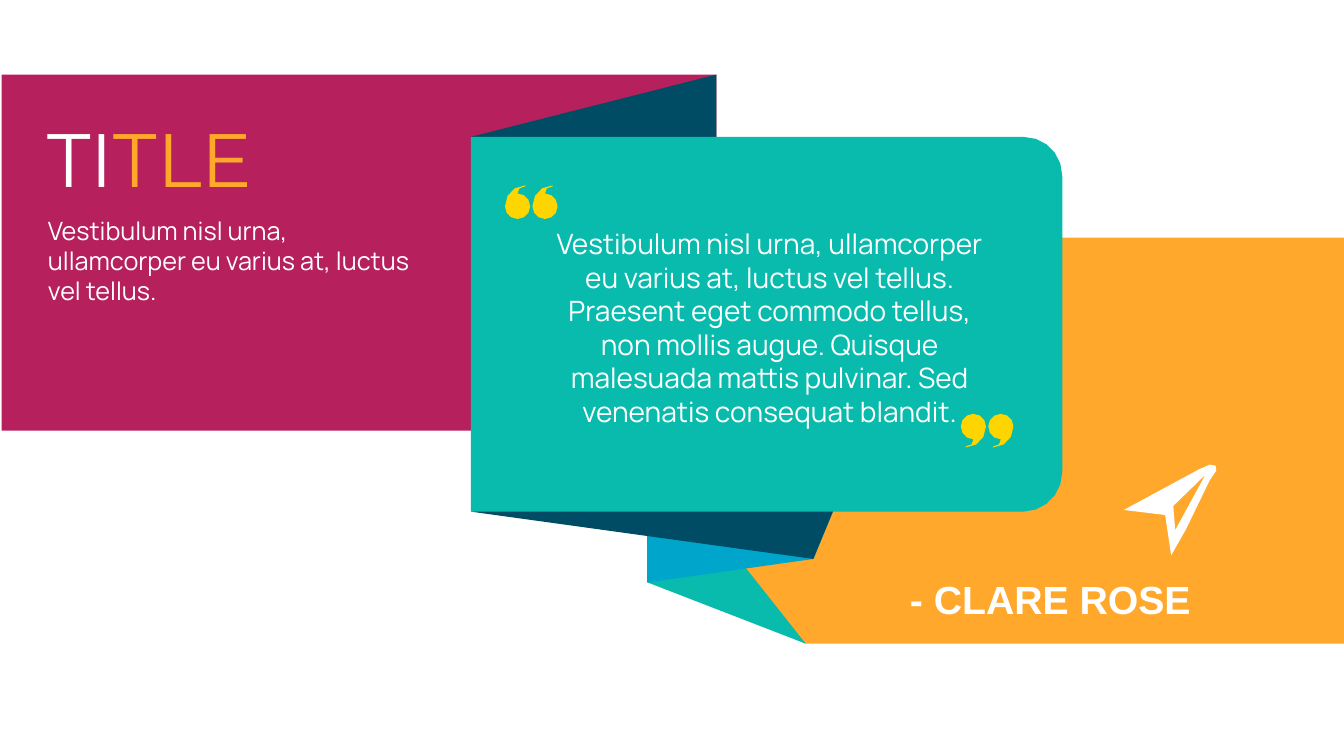
from pptx import Presentation
from pptx.dml.color import RGBColor
from pptx.enum import shapes, text
from pptx.util import Pt

WHITE, ORANGE, TEAL = "FFFFFF", "FFA82C", "08BBAD"
NAVY, BLUE, MAGENTA, YELLOW = "004C64", "00A5CC", "B5205D", "FFD500"


def color(value):
    return RGBColor.from_string(value)


def flatten(outline, steps):
    points = [outline[0]]
    for segment in outline[1:]:
        if len(segment) == 2:
            points.append(segment)
            continue
        start, (ax, ay, bx, by, ex, ey) = points[-1], segment
        for step in range(1, steps + 1):
            t = step / steps
            weights = (1 - t) ** 3, 3 * t * (1 - t) ** 2, 3 * t * t * (1 - t), t ** 3
            x = sum(w * v for w, v in zip(weights, (start[0], ax, bx, ex)))
            y = sum(w * v for w, v in zip(weights, (start[1], ay, by, ey)))
            points.append((x, y))
    return points


def add_span(para, content, font="Manrope", size=18, fill=WHITE, bold=False):
    span = para.add_run()
    span.text = content
    span.font.name = font
    span.font.size = Pt(size)
    span.font.bold = bold
    span.font.color.rgb = color(fill)


class Page:
    def __init__(self, deck):
        self.shapes = deck.slides.add_slide(deck.slide_layouts[6]).shapes

    def paint(self, shape, fill):
        shape.shadow.inherit = False
        shape.fill.solid()
        shape.fill.fore_color.rgb = color(fill)
        shape.line.fill.background()

    def rectangle(self, left, top, width, height, fill):
        kind = shapes.MSO_SHAPE.RECTANGLE
        self.paint(self.shapes.add_shape(kind, Pt(left), Pt(top), Pt(width), Pt(height)), fill)

    def outline(self, fill, *contours, steps=1):
        builder = None
        for contour in contours:
            first, *rest = [(Pt(x), Pt(y)) for x, y in flatten(contour, steps)]
            if builder is None:
                builder = self.shapes.build_freeform(*first)
            else:
                builder.move_to(*first)
            builder.add_line_segments(rest, close=True)
        self.paint(builder.convert_to_shape(), fill)

    def quote_mark(self, left, top, closing=False):
        drop = [(10.3, 2.2), (14.5, 0.7), (14.5, 0),
                (6, 0, 0, 7, 0, 15), (0, 20, 4, 24, 9, 24),
                (14, 24, 18, 20, 18, 15), (18, 10, 14, 5.8, 9, 5.8)]
        points = flatten(drop, 3)
        if closing:
            points = [(18 - x, 24 - y) for x, y in points]
        self.outline(YELLOW, [(left + x, top + y) for x, y in points])

    def text_box(self, left, top, width, height, spans, centered=False, spacing=None):
        box = self.shapes.add_textbox(Pt(left), Pt(top), Pt(width), Pt(height))
        box.text_frame.word_wrap = True
        para = box.text_frame.paragraphs[0]
        para.alignment = text.PP_ALIGN.CENTER if centered else text.PP_ALIGN.LEFT
        para.line_spacing = spacing
        for content, style in spans:
            add_span(para, content, **style)


def main():
    deck = Presentation()
    deck.slide_width, deck.slide_height = Pt(960), Pt(540)
    page = Page(deck)

    page.outline(ORANGE, [(960, 459.8), (575.5, 459.8), (476, 415), (525.5, 169.8), (960, 169.8)])
    page.rectangle(1.2, 53.3, 510.5, 254.3, MAGENTA)
    page.outline(NAVY, [(511.7, 162), (511.7, 53.3), (336.3, 97.8)])
    page.outline(TEAL, [(462.3, 416), (513.5, 381.5), (575.5, 459.8)])
    page.outline(BLUE, [(610, 329), (581, 399.3), (462.3, 416), (462.3, 359.3)])
    page.outline(NAVY, [(610, 329), (581, 399.3), (336.3, 365.5)])
    page.outline(TEAL, [(336.3, 365.5), (336.3, 97.8), (731, 97.8),
                        (746.5, 97.8, 758.8, 110, 758.8, 126), (758.8, 337),
                        (758.8, 352.5, 746.5, 365.5, 731, 365.5)], steps=5)

    title_style = dict(font="Montserrat", size=54)
    page.text_box(26.9, 83.5, 325.5, 52.5,
                  [("TI", title_style), ("TLE", dict(title_style, fill=ORANGE))], spacing=0.9)
    page.text_box(27.2, 150.1, 273.6, 90,
                  [("Vestibulum nisl urna, ullamcorper eu varius at, luctus vel tellus.", {})])
    page.text_box(385.7, 158.2, 328.3, 147.6,
                  [("Vestibulum nisl urna, ullamcorper eu varius at, luctus vel tellus. "
                    "Praesent eget commodo tellus, non mollis augue. Quisque malesuada "
                    "mattis pulvinar. Sed venenatis consequat blandit.", dict(size=20))],
                  centered=True)

    for index in range(2):
        page.quote_mark(360.7 + 19.6 * index, 132.4)
        page.quote_mark(686.3 + 19.6 * index, 295.6, closing=True)

    page.outline(WHITE,
                 [(868.3, 332.6), (865.4, 329.8, 864, 332.6, 856, 335.5),
                  (802.8, 364.3), (832.3, 367.9), (836.6, 396.7),
                  (836.6, 396.7, 856, 364.3, 864, 343.4),
                  (868.3, 337, 871.2, 334.1, 868.3, 332.6)],
                 [(861.1, 339.1), (839.5, 378.7), (838.1, 361.4)], steps=2)
    page.text_box(613.4, 407.5, 273.6, 41,
                  [("- CLARE ROSE", dict(font="Arial", size=28, bold=True))], centered=True)

    deck.save("out.pptx")


if __name__ == "__main__":
    main()
